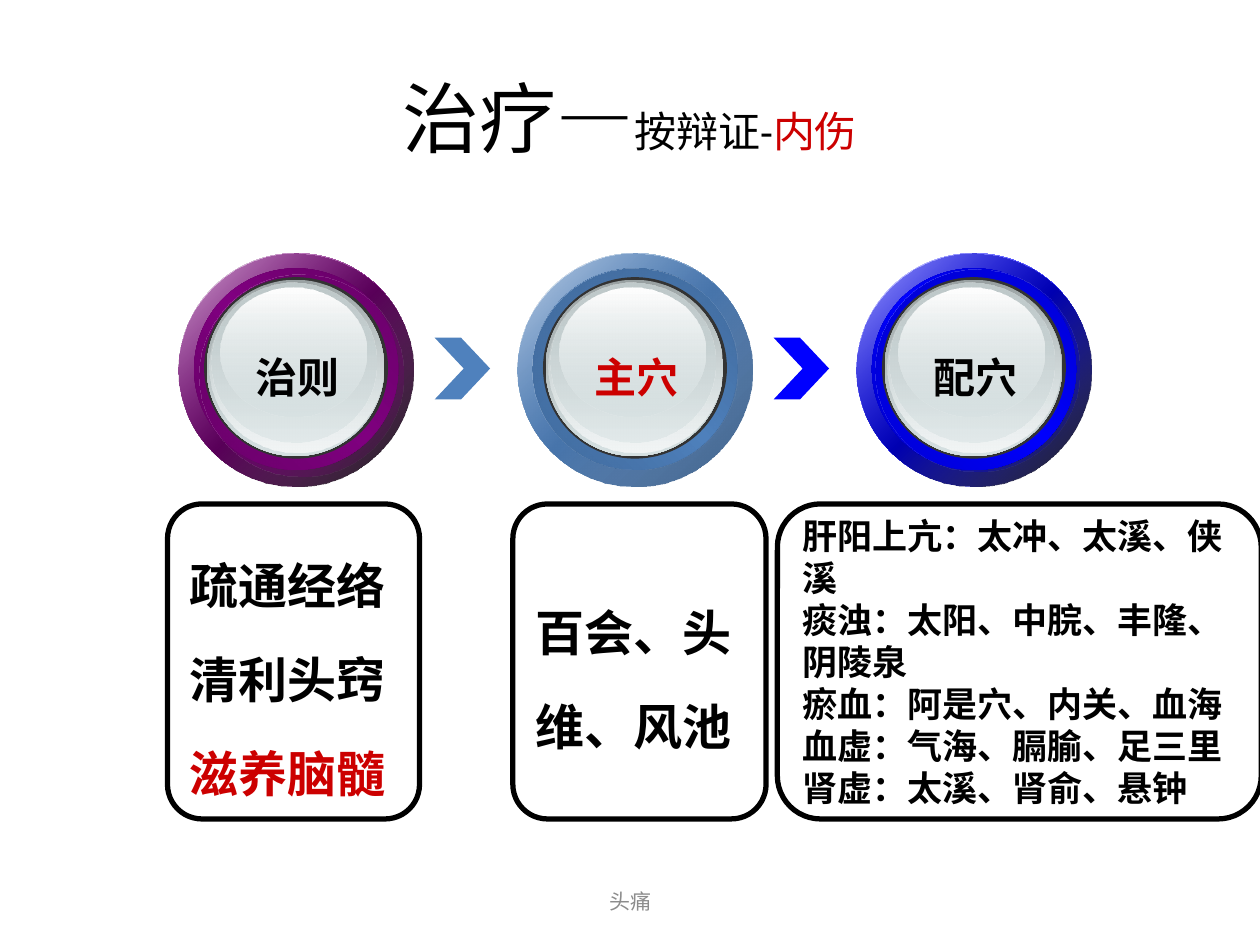
from dataclasses import dataclass

from pptx import Presentation
from pptx import util as u
from pptx.dml.color import RGBColor
from pptx.enum import shapes, text
from pptx.oxml import parse_xml
from pptx.oxml.ns import nsdecls

PX = 9144  # 100 px to the inch
KIND = shapes.MSO_SHAPE


@dataclass(frozen=True)
class Theme:
    ink: str = "000000"
    accent: str = "CC0000"
    muted: str = "8C8C8C"
    purple: str = "800080"
    steel: str = "4F81BD"
    blue: str = "0000FF"
    rim: str = "333333"
    head: str = "Calibri"
    body: str = "DejaVu Sans"
    title: int = 44
    label: int = 24
    large: int = 28
    small: int = 20
    foot: int = 12


THEME = Theme()

# Ring colour, dark end (with opacity), inner edge, gloss and gloss offset
RINGS = [
    (THEME.purple, (100, "000000", 90), "620062", "690069", (16, 17)),
    (THEME.steel, (100, "395C87"), "3C6391", "416A9B", (12, 12)),
    (THEME.blue, (100, "000000", 90), "0000C3", "0000D1", (15, 13)),
]

# Glass face: offset and size, then gradient stops
FACE = [
    ((22, 21, 141, 140), [(0, "99A1A2"), (100, "D6E1E2")]),
    ((24, 22, 138, 136), [(0, "D6E1E2", 0), (100, "F2F5F5")]),
    ((26, 23, 131, 127), [(0, "C1CBCC"), (100, "D6E1E2", 48)]),
    ((33, 27, 116, 103), [(0, "FFFFFF"), (100, "D6E1E2", 38)]),
]


def place(item, box):
    for name, value in zip(("left", "top", "width", "height"), box):
        setattr(item, name, u.Emu(value * PX))


def add_shape(page, kind, box, fill=None, line=None, adjust=None):
    shape = page.shapes.add_shape(kind, *(u.Emu(value * PX) for value in box))
    shape.shadow.inherit = False
    if fill:
        shape.fill.solid()
        shape.fill.fore_color.rgb = RGBColor.from_string(fill)
    else:
        shape.fill.background()
    if line:
        shape.line.color.rgb = RGBColor.from_string(line)
        shape.line.width = u.Pt(3)
    else:
        shape.line.fill.background()
    if adjust is not None:
        shape.adjustments[0] = adjust
    return shape


def add_gradient(page, box, stops, angle):
    """An ellipse; each stop is (percent, colour[, opacity percent])."""
    shape = add_shape(page, KIND.OVAL, box, THEME.ink)
    marks = ""
    for place_at, colour, *opacity in stops:
        alpha = "".join(f'<a:alpha val="{value * 1000}"/>' for value in opacity)
        marks += (f'<a:gs pos="{place_at * 1000}"><a:srgbClr val="{colour}">'
                  f'{alpha}</a:srgbClr></a:gs>')
    gradient = parse_xml(
        f'<a:gradFill {nsdecls("a")} rotWithShape="1"><a:gsLst>{marks}</a:gsLst>'
        f'<a:lin ang="{angle * 60000}" scaled="0"/></a:gradFill>')
    properties = shape._element.spPr
    properties.replace(properties.find(gradient.tag.replace("gradFill", "solidFill")), gradient)


def add_span(para, words, size, colour=THEME.ink, font=THEME.head, bold=False):
    span = para.add_run()
    span.text = words
    style = {"name": font, "size": u.Pt(size), "bold": bold}
    for name, value in style.items():
        setattr(span.font, name, value)
    span.font.color.rgb = RGBColor.from_string(colour)


def add_label(page, box, words, size, colour, bold=False, wrap=True,
              anchor=text.MSO_ANCHOR.TOP):
    label = page.shapes.add_textbox(*(u.Emu(value * PX) for value in box))
    frame = label.text_frame
    frame.word_wrap = wrap
    frame.vertical_anchor = anchor
    para = frame.paragraphs[0]
    para.alignment = text.PP_ALIGN.CENTER
    add_span(para, words, size, colour, bold=bold)


def add_title(page, box):
    title = page.shapes.title
    place(title, box)
    title.text_frame.vertical_anchor = text.MSO_ANCHOR.MIDDLE
    para = title.text_frame.paragraphs[0]
    para.alignment = text.PP_ALIGN.CENTER
    add_span(para, "治疗—", THEME.title)
    add_span(para, "按辩证-", THEME.label)
    add_span(para, "内伤", THEME.label, THEME.accent)


def add_card(page, box, lines, size, spacing):
    card = add_shape(page, KIND.ROUNDED_RECTANGLE, box, line=THEME.ink, adjust=0.137)
    frame = card.text_frame
    frame.word_wrap = True
    frame.vertical_anchor = text.MSO_ANCHOR.MIDDLE
    for index, (words, colour) in enumerate(lines):
        para = frame.add_paragraph() if index else frame.paragraphs[0]
        para.alignment = text.PP_ALIGN.LEFT
        para.line_spacing = spacing
        add_span(para, words, size, colour, THEME.body, True)


def add_button(page, box, ring, words, colour):
    left, top, width, height = box
    base, dark, edge, gloss, (gloss_x, gloss_y) = ring
    # Coloured ring
    add_gradient(page, box, [(0, "FFFFFF"), (50, base), (100, "FFFFFF")], 45)
    add_gradient(page, box, [(0, base, 32), dark], 45)
    add_gradient(page, (left + 12, top + 12, 162, 160),
                 [(0, edge), (50, base), (100, edge)], 315)
    add_gradient(page, (left + gloss_x, top + gloss_y, 162, 160),
                 [(0, gloss), (100, base, 0)], 45)
    # Dark rim and glass face
    add_shape(page, KIND.OVAL, (left + 20, top + 19, 146, 144), THEME.rim)
    for (x, y, wide, high), stops in FACE:
        add_gradient(page, (left + x, top + y, wide, high), stops, 90)
    add_label(page, (left + 51, top + 73, 87, 50), words, THEME.label, colour,
              bold=True, wrap=False)


def add_steps(page, box):
    """Three buttons on an equal pitch, with chevrons between them."""
    left, top, pitch, height = box
    labels = [("治则", THEME.ink), ("主穴", THEME.accent), ("配穴", THEME.ink)]
    for index, (ring, (words, colour)) in enumerate(zip(RINGS, labels)):
        x = left + index * pitch
        if index:
            add_shape(page, KIND.CHEVRON, (x - 66, top + 67, 44, 49),
                      ring[0], adjust=0.525)
        add_button(page, (x, top, 186, height), ring, words, colour)


def add_cards(page, top, height):
    principles = [("疏通经络", THEME.ink), ("清利头窍", THEME.ink), ("滋养脑髓", THEME.accent)]
    main_points = [("百会、头维、风池", THEME.ink)]
    extra_points = [(words, THEME.ink) for words in (
        "肝阳上亢：太冲、太溪、侠溪",
        "痰浊：太阳、中脘、丰隆、阴陵泉",
        "瘀血：阿是穴、内关、血海",
        "血虚：气海、膈腧、足三里",
        "肾虚：太溪、肾俞、悬钟",
    )]
    add_card(page, (133, top, 200, height), principles, THEME.large, 1.6)
    add_card(page, (407, top, 201, height), main_points, THEME.large, 1.6)
    add_card(page, (617, top, 384, height), extra_points, THEME.small, 1.0)


def main():
    deck = Presentation()
    deck.slide_width, deck.slide_height = u.Inches(10), u.Inches(7.5)
    page = deck.slides.add_slide(deck.slide_layouts[5])
    add_title(page, (50, 30, 900, 125))
    add_cards(page, 400, 250)
    add_steps(page, (142, 201, 269, 185))
    # Footer
    add_label(page, (342, 695, 317, 40), "头痛", THEME.foot, THEME.muted,
              anchor=text.MSO_ANCHOR.MIDDLE)
    deck.save("out.pptx")


if __name__ == "__main__":
    main()
